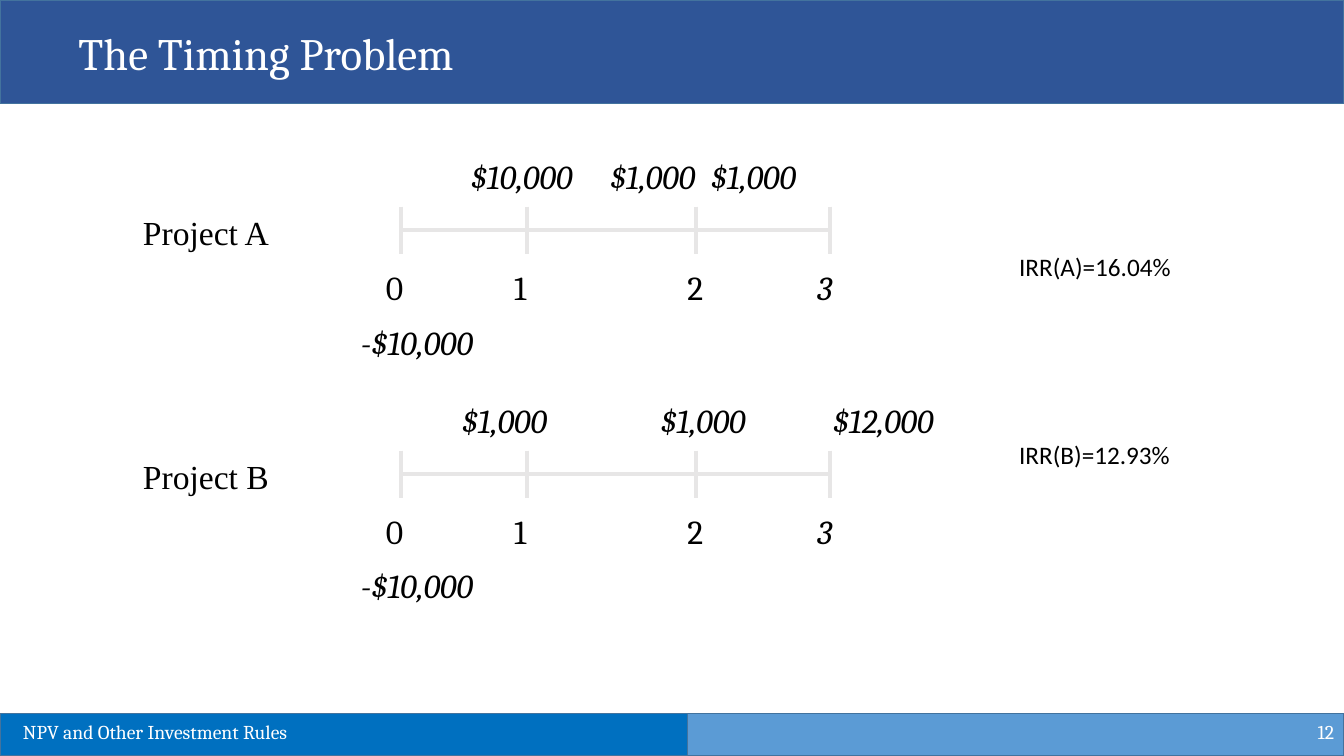
from dataclasses import dataclass

from lxml.etree import SubElement
from pptx import Presentation
from pptx.dml.color import RGBColor
from pptx.enum.shapes import MSO_CONNECTOR, MSO_SHAPE
from pptx.enum.text import MSO_ANCHOR, PP_ALIGN
from pptx.oxml.ns import qn
from pptx.util import Inches, Pt


@dataclass(frozen=True)
class Theme:
    navy: str = "2F5597"
    blue: str = "0070C0"
    sky: str = "5B9BD5"
    edge: str = "43739E"
    rail: str = "E7E6E6"
    white: str = "FFFFFF"
    black: str = "000000"
    serif: str = "Cambria"
    roman: str = "Times New Roman"
    sans: str = "Calibri"
    title: int = 32
    body: int = 24
    note: int = 18
    foot: int = 14


THEME = Theme()
WIDTH, HEIGHT = 13.33, 7.5


def style(run, font, size, color, slant=False):
    run.font.name = font
    run.font.size = Pt(size)
    run.font.color.rgb = RGBColor.from_string(color)
    run.font.italic = slant


def add_text(shapes, box, text, font, size, color, slant=False):
    label = shapes.add_textbox(*map(Inches, box))
    frame = label.text_frame
    frame.word_wrap = True
    frame.text = text
    style(frame.paragraphs[0].runs[0], font, size, color, slant)
    return frame


def add_bar(shapes, box, color):
    bar = shapes.add_shape(MSO_SHAPE.RECTANGLE, *map(Inches, box))
    bar.shadow.inherit = False
    bar.fill.solid()
    bar.fill.fore_color.rgb = RGBColor.from_string(color)
    bar.line.color.rgb = RGBColor.from_string(THEME.edge)
    bar.line.width = Pt(1)


def add_rule(shapes, *ends):
    rule = shapes.add_connector(MSO_CONNECTOR.STRAIGHT, *map(Inches, ends))
    rule.line.color.rgb = RGBColor.from_string(THEME.rail)
    rule.line.width = Pt(3)
    SubElement(rule._element.spPr, qn("a:effectLst"))


def set_tabs(frame, stops):
    props = frame.paragraphs[0]._p.get_or_add_pPr()
    tabs = SubElement(props, qn("a:tabLst"))
    for stop in stops:
        SubElement(tabs, qn("a:tab"), pos=str(Inches(stop)), algn="l")


def add_header(slide, box, text):
    left, top, width, height = box
    add_bar(slide.shapes, box, THEME.navy)
    add_text(slide.shapes, (left + 0.68, top + 0.21, width - 1.25, 0.64),
             text, THEME.serif, THEME.title, THEME.white)


def add_footer(slide, box, text, number):
    left, top, width, height = box
    split = 6.82
    add_bar(slide.shapes, (left, top, split, height), THEME.blue)
    add_bar(slide.shapes, (left + split, top, width - split, height), THEME.sky)
    count = add_text(slide.shapes, (left + width - 3, top - 0.02, 3, 0.4),
                     number, THEME.serif, THEME.foot, THEME.white)
    count.vertical_anchor = MSO_ANCHOR.MIDDLE
    count.paragraphs[0].alignment = PP_ALIGN.RIGHT
    add_text(slide.shapes, (left + 0.13, top + 0.01, 5.54, 0.34),
             text, THEME.serif, THEME.foot, THEME.white)


def add_project(slide, box, name, flows, start, stops):
    left, top, width, height = box
    shapes = slide.shapes.add_group_shape().shapes
    ticks = [left + step for step in (2.66, 3.91, 5.58, 6.91)]
    rail = top + 0.78
    add_rule(shapes, ticks[0], rail, ticks[-1], rail)
    for tick in ticks:
        add_rule(shapes, tick, rail - 0.23, tick, rail + 0.24)

    years = add_text(shapes, (left + 2.41, top + 1.1, 6, 0.5), "0\t1\t2\t",
                     THEME.serif, THEME.body, THEME.black)
    set_tabs(years, (1.27, 2.99, 4.28))
    last = years.paragraphs[0].add_run()
    last.text = "3"
    style(last, THEME.serif, THEME.body, THEME.black, True)

    gains = add_text(shapes, (left + start, top, width - start, 0.47),
                     "\t".join(flows), THEME.serif, THEME.body,
                     THEME.black, True)
    set_tabs(gains, stops)
    add_text(shapes, (left + 2.16, top + 1.64, 1.58, 0.5), "-$10,000",
             THEME.serif, THEME.body, THEME.black, True)
    add_text(shapes, (left, top + 0.55, 2.2, 0.5), name,
             THEME.roman, THEME.body, THEME.black)


def add_rate(slide, box, text):
    add_text(slide.shapes, box, text, THEME.sans, THEME.note, THEME.black)


def main():
    deck = Presentation()
    deck.slide_width = Inches(WIDTH)
    deck.slide_height = Inches(HEIGHT)
    slide = deck.slides.add_slide(deck.slide_layouts[6])
    add_header(slide, (0, 0, WIDTH, 1.03), "The Timing Problem")
    add_footer(slide, (0, 7.08, WIDTH, 0.42),
               "NPV and Other Investment Rules", "12")
    add_project(slide, (1.32, 1.5, 8.41, 2.14), "Project A",
                ("$10,000", "$1,000", "$1,000"), 3.25, (1.38, 2.38))
    add_project(slide, (1.32, 3.92, 8.41, 2.14), "Project B",
                ("$1,000", "$1,000", "$12,000"), 3.16, (1.97, 3.68))
    add_rate(slide, (10.01, 2.44, 2.19, 0.4), "IRR(A)=16.04%")
    add_rate(slide, (10.01, 4.31, 2.19, 0.4), "IRR(B)=12.93%")
    deck.save("out.pptx")


if __name__ == "__main__":
    main()
